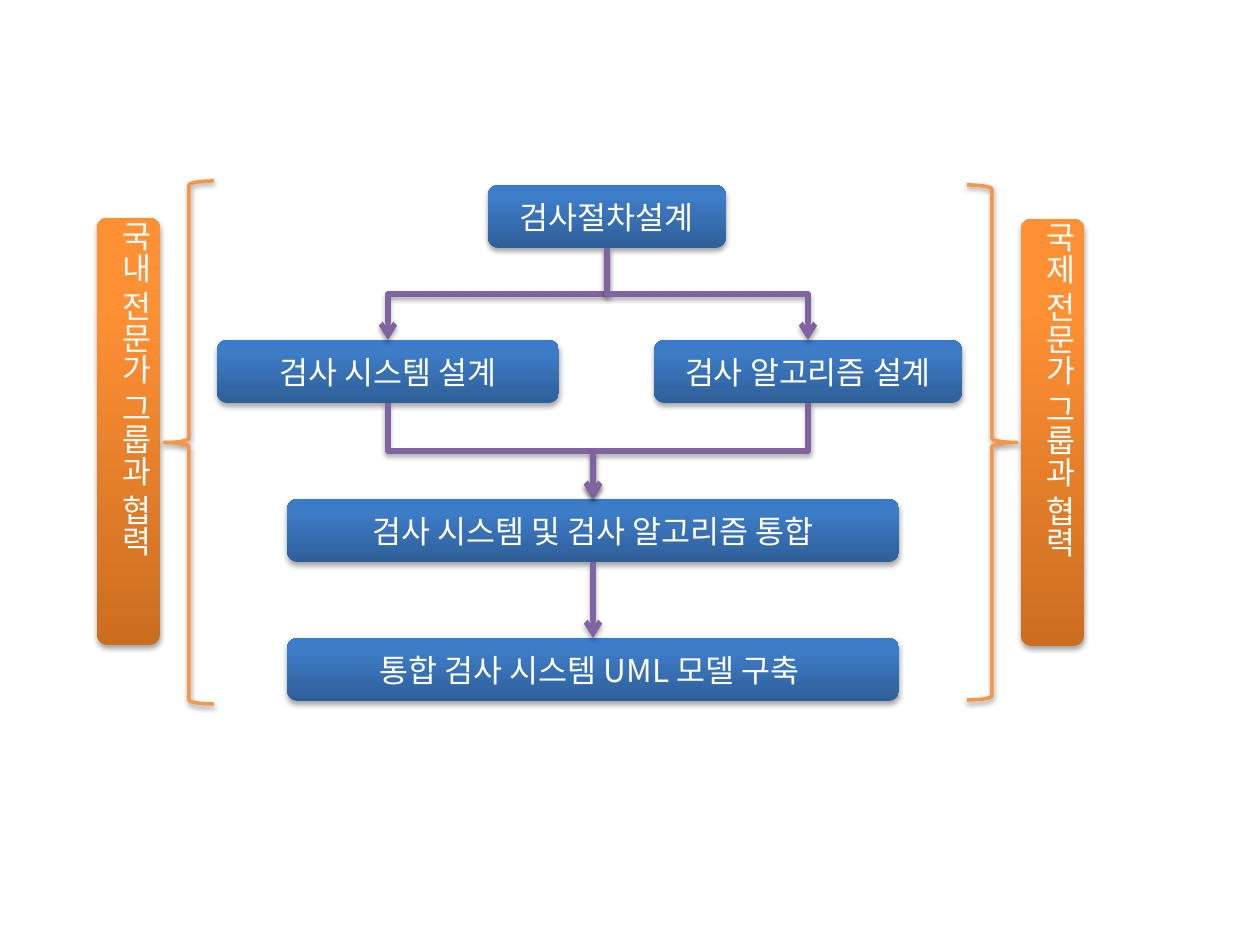
from lxml.etree import SubElement
from copy import deepcopy
from pptx import Presentation
from pptx.dml.color import RGBColor
from pptx.enum.shapes import MSO_CONNECTOR as Link, MSO_SHAPE as Shape
from pptx.enum.text import MSO_ANCHOR as Anchor, PP_ALIGN as Align
from pptx.oxml.ns import qn
from pptx.util import Emu, Inches, Pt

FONT = "Noto Sans CJK KR"
COLORS = {
    "text": "FFFFFF",
    "arrow": "8064A2",
    "brace": "F79646",
    "shadow": "000000",
}
GRADIENTS = {
    "step": ("2F5F99", "3D7CC7", "3A7CCB"),
    "partner": ("CC6E20", "FF9034", "FF9136"),
}
STOPS = (0, 0.8, 1)
TOP, BOTTOM = 0, 2
BOX_SIZE = 63


def px(count):
    return Emu(round(count * 914400 / 126))


def rgb(name):
    return RGBColor.from_string(COLORS[name])


def add_shadow(shape, opacity=35, distance=1.8):
    """Add a soft shadow below; call after the line has been set."""
    effects = SubElement(shape._element.spPr, qn("a:effectLst"))
    shadow = SubElement(effects, qn("a:outerShdw"), blurRad=str(Pt(3.1)),
                        dist=str(Pt(distance)), dir="5400000", rotWithShape="0")
    color = SubElement(shadow, qn("a:srgbClr"), val=COLORS["shadow"])
    SubElement(color, qn("a:alpha"), val=str(opacity * 1000))


def fill_gradient(shape, colors):
    shape.fill.gradient()
    shape.fill.gradient_angle = 90
    stop_list = shape._element.spPr.find(".//" + qn("a:gsLst"))
    stop_list.append(deepcopy(stop_list[-1]))
    for stop, position, color in zip(shape.fill.gradient_stops, STOPS, colors):
        stop.color.rgb = RGBColor.from_string(color)
        stop.position = position


def add_box(page, text, left, top, width, height, style):
    box = page.shapes.add_shape(Shape.ROUNDED_RECTANGLE,
                                px(left), px(top), px(width), px(height))
    fill_gradient(box, GRADIENTS[style])
    box.line.fill.background()
    add_shadow(box)
    frame = box.text_frame
    frame.word_wrap = True
    frame.vertical_anchor = Anchor.MIDDLE
    para = frame.paragraphs[0]
    para.text = text
    para.alignment = Align.CENTER
    para.font.size = Pt(18)
    para.font.name = FONT
    para.font.color.rgb = rgb("text")
    SubElement(para.font._element, qn("a:ea"), typeface=FONT)
    return box


def add_step(page, text, left, top, width):
    return add_box(page, text, left, top, width, BOX_SIZE, "step")


def add_partner(page, text, left, top):
    box = add_box(page, text, left, top, BOX_SIZE, 427, "partner")
    frame = box.text_frame
    frame.margin_left, frame.margin_right = Inches(0.16), Inches(0.1)
    frame.margin_top = frame.margin_bottom = 0
    frame._txBody.bodyPr.set("vert", "eaVert")


def add_brace(page, kind, left, top, width, height):
    brace = page.shapes.add_shape(kind, px(left), px(top), px(width), px(height))
    brace.fill.background()
    brace.line.color.rgb = rgb("brace")
    brace.line.width = Pt(2)
    add_shadow(brace, opacity=38, distance=1.6)


def turn_downward(arrow):
    """Turn an elbow so that it leaves and arrives vertically."""
    start_x, start_y = arrow.begin_x, arrow.begin_y
    run, drop = arrow.end_x - start_x, arrow.end_y - start_y
    frame = arrow._element.spPr.find(qn("a:xfrm"))
    for flip in ("flipH", "flipV"):
        frame.attrib.pop(flip, None)
    if run < 0:
        frame.set("rot", "5400000")
    else:
        frame.set("rot", "16200000")
        frame.set("flipH", "1")
    arrow.left = Emu(start_x + (run - drop) // 2)
    arrow.top = Emu(start_y + (drop - abs(run)) // 2)
    arrow.width, arrow.height = Emu(drop), Emu(abs(run))


def add_arrow(page, source, target, kind=Link.ELBOW):
    arrow = page.shapes.add_connector(kind, 0, 0, 0, 0)
    arrow.begin_connect(source, BOTTOM)
    arrow.end_connect(target, TOP)
    if kind == Link.ELBOW:
        turn_downward(arrow)
    arrow.line.color.rgb = rgb("arrow")
    arrow.line.width = Pt(3)
    SubElement(arrow.line._get_or_add_ln(), qn("a:tailEnd"), type="arrow")
    add_shadow(arrow)


def main():
    deck = Presentation()
    deck.slide_width, deck.slide_height = px(1260), px(945)
    page = deck.slides.add_slide(deck.slide_layouts[6])

    # Design steps
    procedure = add_step(page, "검사절차설계", 488, 185, 238)
    system = add_step(page, "검사 시스템 설계", 217, 340, 342)
    algorithm = add_step(page, "검사 알고리즘 설계", 654, 340, 308)
    merged = add_step(page, "검사 시스템 및 검사 알고리즘 통합", 287, 499, 612)
    model = add_step(page, "통합 검사 시스템 UML 모델 구축 ", 287, 638, 612)

    # Flow between the steps
    for branch in (system, algorithm):
        add_arrow(page, procedure, branch)
    for branch in (system, algorithm):
        add_arrow(page, branch, merged)
    add_arrow(page, merged, model, Link.STRAIGHT)

    # Partner groups on both sides
    add_partner(page, "국내 전문가 그룹과 협력", 97, 218)
    add_brace(page, Shape.LEFT_BRACE, 164, 181, 50, 523)
    add_brace(page, Shape.RIGHT_BRACE, 967, 185, 50, 515)
    add_partner(page, "국제 전문가 그룹과 협력 ", 1021, 219)

    deck.save("out.pptx")


if __name__ == "__main__":
    main()
